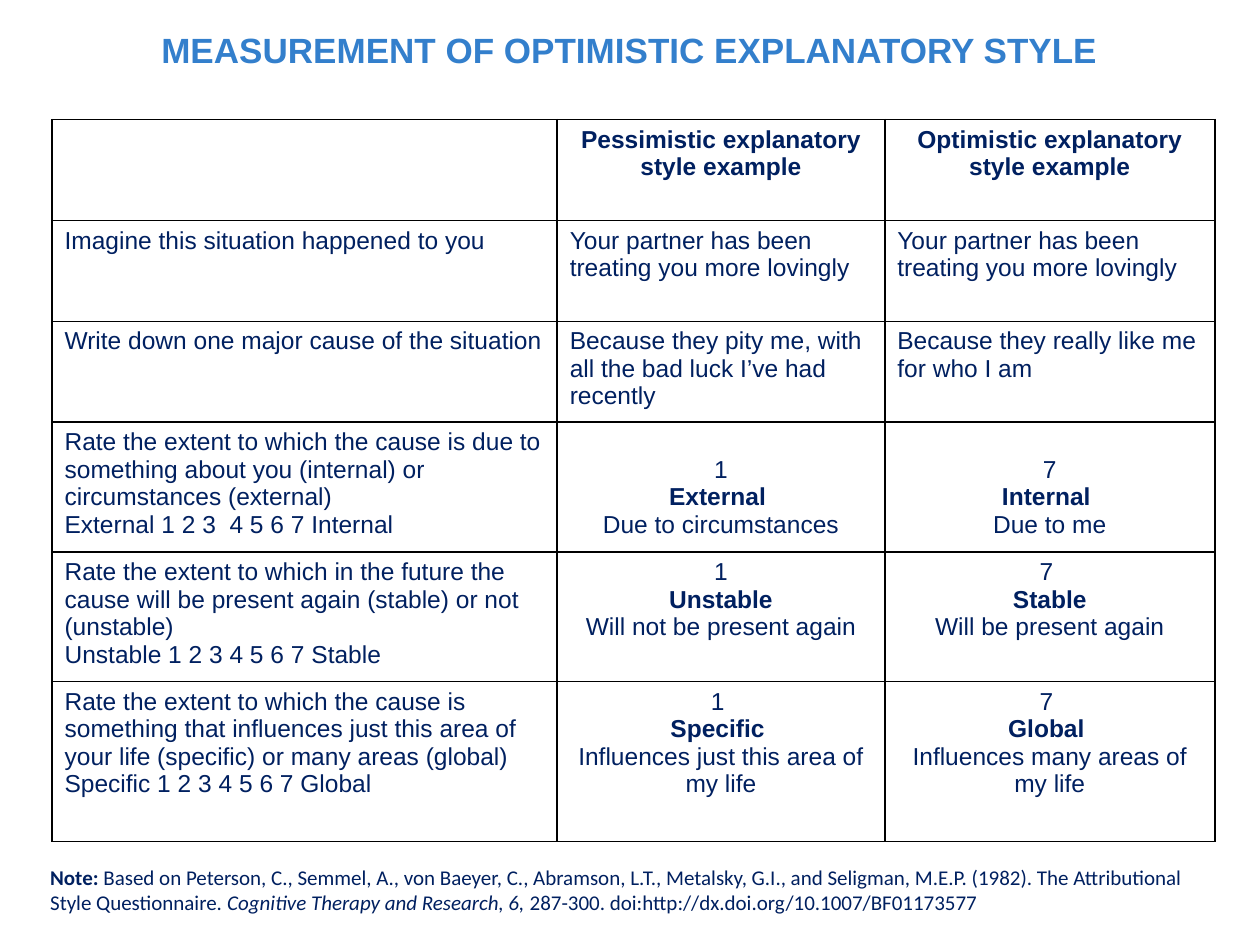
from dataclasses import dataclass

import pptx
import pptx.dml.color
import pptx.enum.text
import pptx.oxml
import pptx.oxml.ns
import pptx.util

Pt = pptx.util.Pt
RGBColor = pptx.dml.color.RGBColor
Align = pptx.enum.text.PP_ALIGN
Anchor = pptx.enum.text.MSO_ANCHOR

NAVY = RGBColor(0x00, 0x20, 0x60)
BLUE = RGBColor(0x33, 0x7F, 0xCC)
BLACK = RGBColor(0x00, 0x00, 0x00)

COLUMN_WIDTHS = [288.7, 187.2, 188.6]
ROW_HEIGHTS = [57.6, 57.6, 57.6, 74.2, 74.2, 91.4]
BORDER_WIDTH = Pt(1)
CELL_INSET = 3.6
LINE_HEIGHT = 15.8


@dataclass
class Line:
    text: str
    bold: bool = False


@dataclass
class Entry:
    lines: list[Line]
    centred: bool = False
    lines_down: int = 0


def header(text: str) -> Entry:
    return Entry([Line(text, bold=True)], centred=True)


def plain(*texts: str) -> Entry:
    return Entry([Line(text) for text in texts])


def rating(score: str, label: str, meaning: str, lines_down: int = 0) -> Entry:
    lines = [Line(score), Line(label, bold=True), Line(meaning)]
    return Entry(lines, centred=True, lines_down=lines_down)


TREATED = "Your partner has been treating you more lovingly"
ROWS = [
    [Entry([]),
     header("Pessimistic explanatory style example"),
     header("Optimistic explanatory style example")],
    [plain("Imagine this situation happened to you"),
     plain(TREATED),
     plain(TREATED)],
    [plain("Write down one major cause of the situation"),
     plain("Because they pity me, with all the bad luck I’ve had recently"),
     plain("Because they really like me for who I am")],
    [plain("Rate the extent to which the cause is due to something about you "
           "(internal) or circumstances (external)",
           "External 1 2 3  4 5 6 7 Internal"),
     rating("1", "External ", "Due to circumstances", lines_down=1),
     rating("7", "Internal ", "Due to me", lines_down=1)],
    [plain("Rate the extent to which in the future the cause will be present "
           "again (stable) or not (unstable)",
           "Unstable 1 2 3 4 5 6 7 Stable"),
     rating("1", "Unstable", "Will not be present again"),
     rating("7 ", "Stable", "Will be present again")],
    [plain("Rate the extent to which the cause is something that influences "
           "just this area of your life (specific) or many areas (global)",
           "Specific 1 2 3 4 5 6 7 Global"),
     rating("1 ", "Specific ", "Influences just this area of my life"),
     rating("7 ", "Global ", "Influences many areas of my life")],
]


def add_span(para, text: str, *, size: float = 14, font: str = "Arial",
             color: RGBColor = NAVY, bold: bool = False,
             italic: bool = False) -> None:
    span = para.add_run()
    span.text = text
    span.font.size = Pt(size)
    span.font.name = font
    span.font.color.rgb = color
    span.font.bold = bold
    span.font.italic = italic


def add_borders(cell) -> None:
    properties = cell._tc.get_or_add_tcPr()
    for side in ("lnL", "lnR", "lnT", "lnB"):
        properties.append(pptx.oxml.parse_xml(
            f'<a:{side} {pptx.oxml.ns.nsdecls("a")} w="{BORDER_WIDTH}">'
            f'<a:solidFill><a:srgbClr val="{BLACK}"/></a:solidFill></a:{side}>'))


def fill_cell(cell, entry: Entry) -> None:
    add_borders(cell)
    cell.fill.background()
    cell.margin_top = Pt(CELL_INSET + entry.lines_down * LINE_HEIGHT)
    frame = cell.text_frame
    for index, line in enumerate(entry.lines):
        para = frame.add_paragraph() if index else frame.paragraphs[0]
        para.alignment = Align.CENTER if entry.centred else Align.LEFT
        add_span(para, line.text, bold=line.bold)


def add_title(page) -> None:
    title = page.shapes.title
    title.left, title.top = Pt(47.5), Pt(13)
    title.width, title.height = Pt(624.2), Pt(28)
    frame = title.text_frame
    frame.auto_size = pptx.enum.text.MSO_AUTO_SIZE.NONE
    frame.vertical_anchor = Anchor.MIDDLE
    para = frame.paragraphs[0]
    para.alignment = Align.CENTER
    para.line_spacing = 1.1
    para.space_before = Pt(10)
    add_span(para, "MEASUREMENT OF OPTIMISTIC EXPLANATORY STYLE",
             size=20, color=BLUE, bold=True)


def add_examples_table(page) -> None:
    table = page.shapes.add_table(
        len(ROWS), len(COLUMN_WIDTHS), Pt(29.7), Pt(68.4),
        Pt(sum(COLUMN_WIDTHS)), Pt(sum(ROW_HEIGHTS))).table
    table.first_row = False
    table.horz_banding = False
    for column, width in zip(table.columns, COLUMN_WIDTHS):
        column.width = Pt(width)
    for row, height, entries in zip(table.rows, ROW_HEIGHTS, ROWS):
        row.height = Pt(height)
        for cell, entry in zip(row.cells, entries):
            fill_cell(cell, entry)


def add_note(page) -> None:
    box = page.shapes.add_textbox(Pt(21.6), Pt(490.3), Pt(664.6), Pt(36))
    box.text_frame.word_wrap = True
    para = box.text_frame.paragraphs[0]
    note = {"size": 12, "font": "Calibri"}
    add_span(para, "Note: ", bold=True, **note)
    add_span(para, "Based on Peterson, C., Semmel, A., von Baeyer, C., Abramson, "
             "L.T., Metalsky, G.I., and Seligman, M.E.P. (1982). The "
             "Attributional Style Questionnaire. ", **note)
    add_span(para, "Cognitive Therapy and Research, 6, ", italic=True, **note)
    add_span(para, "287-300. doi:http://dx.doi.org/10.1007/BF01173577", **note)


def main() -> None:
    deck = pptx.Presentation()
    deck.slide_width, deck.slide_height = Pt(720), Pt(540)
    page = deck.slides.add_slide(deck.slide_layouts.get_by_name("Title Only"))
    add_examples_table(page)
    add_note(page)
    add_title(page)
    deck.save("out.pptx")


if __name__ == "__main__":
    main()
